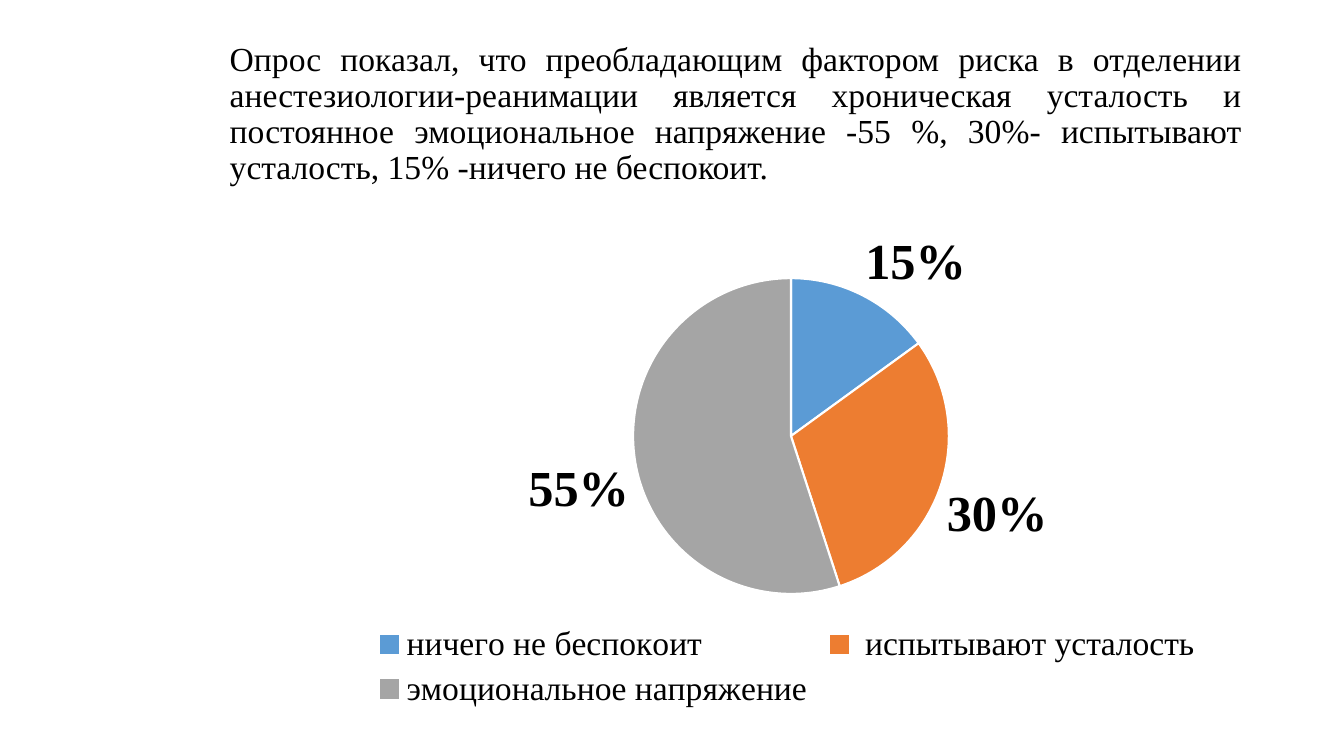
from lxml import etree
from pptx import Presentation
from pptx.chart.data import CategoryChartData
from pptx.dml.color import RGBColor
from pptx.enum.chart import XL_CHART_TYPE as ChartType
from pptx.enum.chart import XL_LABEL_POSITION as LabelPos
from pptx.enum.chart import XL_LEGEND_POSITION as LegendPos
from pptx.enum.text import MSO_ANCHOR, PP_ALIGN
from pptx.oxml.ns import qn
from pptx.util import Cm, Pt

SERIF = "Times New Roman"
BLACK, WHITE = "000000", "FFFFFF"
FINDING = (
    "Опрос показал, что преобладающим фактором риска в отделении "
    "анестезиологии-реанимации является хроническая усталость и постоянное "
    "эмоциональное напряжение -55 %, 30%- испытывают усталость, "
    "15% -ничего не беспокоит."
)
ANSWERS = [
    ("ничего не беспокоит", 0.15, "5B9BD5"),
    (" испытывают усталость ", 0.3, "ED7D31"),
    ("эмоциональное напряжение", 0.55, "A5A5A5"),
]
PIE_AREA = {"x": 0.34, "y": 0.13, "w": 0.32, "h": 0.63}


def color(hex_code):
    return RGBColor.from_string(hex_code)


def style_font(font, **formats):
    font.color.rgb = color(BLACK)
    for attribute, value in formats.items():
        setattr(font, attribute, value)


def place_plot(chart, area):
    """Fix the inner plot area, given as fractions of the chart."""
    plot_area = chart.plots[0]._element.getparent()
    for old in plot_area.findall(qn("c:layout")):
        plot_area.remove(old)
    layout = etree.Element(qn("c:layout"))
    manual = etree.SubElement(layout, qn("c:manualLayout"))
    settings = {"layoutTarget": "inner", "xMode": "edge", "yMode": "edge", **area}
    for tag, value in settings.items():
        etree.SubElement(manual, qn(f"c:{tag}")).set("val", str(value))
    plot_area.insert(0, layout)


def add_finding(slide, left, top, width, height):
    frame = slide.shapes.add_textbox(left, top, width, height).text_frame
    frame.word_wrap = True
    frame.vertical_anchor = MSO_ANCHOR.MIDDLE
    paragraph = frame.paragraphs[0]
    paragraph.alignment = PP_ALIGN.JUSTIFY
    paragraph.line_spacing = 0.9
    sentence = paragraph.add_run()
    sentence.text = FINDING
    style_font(sentence.font, name=SERIF, size=Pt(24))


def add_answer_pie(slide, left, top, width, height):
    names, shares, fills = zip(*ANSWERS)
    data = CategoryChartData(number_format="0%")
    data.categories = names
    data.add_series("Series 1", shares)
    chart = slide.shapes.add_chart(
        ChartType.PIE, left, top, width, height, data
    ).chart
    chart.has_title = False
    style_font(chart.font, name="Calibri", size=Pt(10))

    chart.has_legend = True
    chart.legend.position = LegendPos.BOTTOM
    chart.legend.include_in_layout = False
    style_font(chart.legend.font, name=SERIF, size=Pt(24))

    pie = chart.plots[0]
    pie.vary_by_categories = True
    for index, fill in enumerate(fills):
        sector = pie.series[0].points[index].format
        sector.fill.solid()
        sector.fill.fore_color.rgb = color(fill)
        sector.line.color.rgb = color(WHITE)
        sector.line.width = Pt(1.5)

    labels = pie.series[0].data_labels
    label_formats = {
        "show_value": True,
        "position": LabelPos.OUTSIDE_END,
        "number_format": "0%",
        "number_format_is_linked": False,
    }
    for attribute, value in label_formats.items():
        setattr(labels, attribute, value)
    style_font(labels.font, name=SERIF, size=Pt(36), bold=True)
    place_plot(chart, PIE_AREA)


def main():
    deck = Presentation()
    deck.slide_width, deck.slide_height = Cm(33.87), Cm(19.05)
    slide = deck.slides.add_slide(deck.slide_layouts[6])
    add_finding(slide, Cm(5.54), Cm(1.14), Cm(26), Cm(3.5))
    add_answer_pie(slide, Cm(7.5), Cm(5.36), Cm(24.87), Cm(12.65))
    deck.save("out.pptx")


if __name__ == "__main__":
    main()
